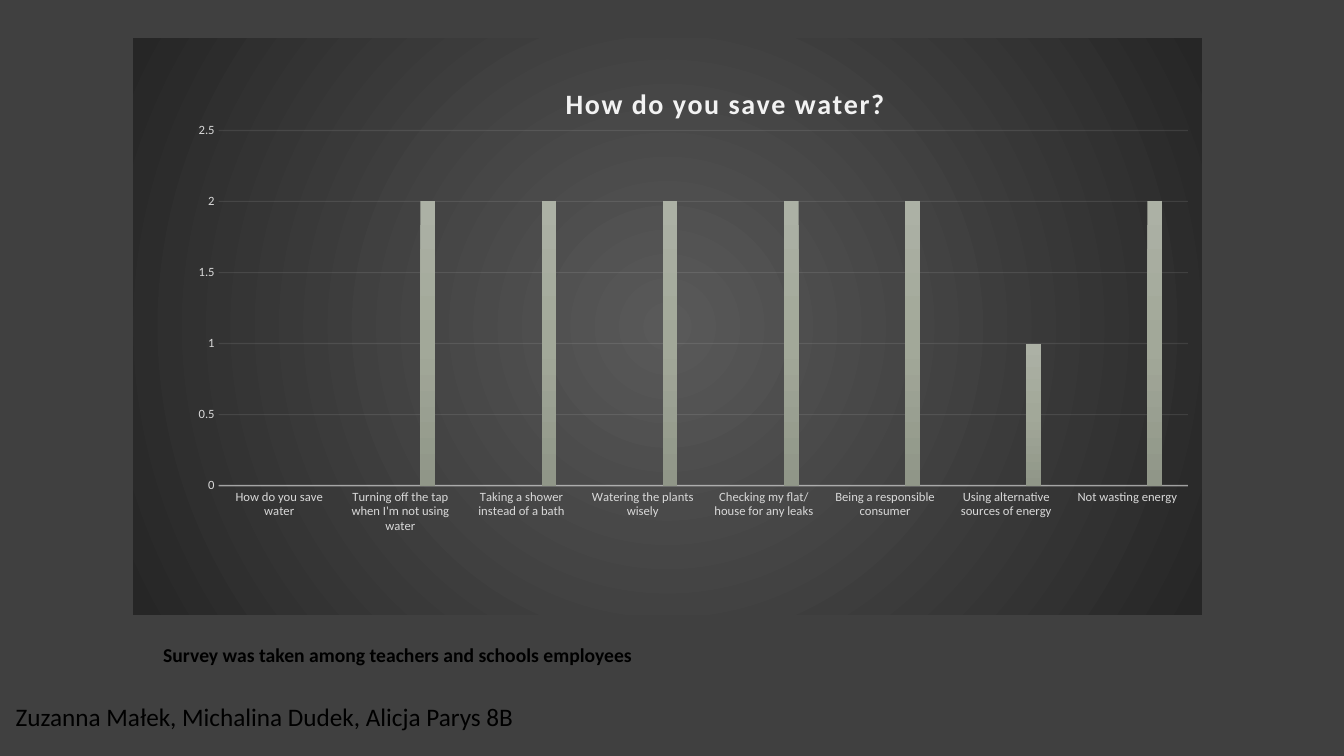
"""Build the slide with the water saving survey chart."""
from pptx import Presentation
from pptx.chart.data import CategoryChartData
from pptx.dml.color import RGBColor
from pptx.enum.chart import XL_CHART_TYPE, XL_TICK_MARK
from pptx.enum.text import MSO_AUTO_SIZE
from pptx.oxml import parse_xml
from pptx.oxml.ns import nsdecls
from pptx.util import Inches, Pt

FONT = "Calibri"
COLORS = {
    "page": "404040",
    "text": "000000",
    "pale": "F2F2F2",
    "label": "D9D9D9",
}
BACKDROP = ["595959", "262626"]
TITLE = "How do you save water?"
ANSWERS = {
    "How do you save water": 0,
    "Turning off the tap when I'm not using water": 2,
    "Taking a shower instead of a bath": 2,
    "Watering the plants wisely": 2,
    "Checking my flat/house for any leaks": 2,
    "Being a responsible consumer": 2,
    "Using alternative sources of energy": 1,
    "Not wasting energy": 2,
}
BLANK = [None] * len(ANSWERS)
SERIES = [
    ("Series 1", BLANK, ["849C9C", "739191", "648383"]),
    ("Series 2", BLANK, ["AFAFAF", "A5A5A5", "939393"]),
    ("Series 3", [0] + BLANK[1:], ["9DADA6", "90A49B", "7F938A"]),
    ("Series 4", BLANK, ["B3B0A4", "AAA797", "989585"]),
    ("Series 5", list(ANSWERS.values()), ["ACB1A5", "A2A899", "909688"]),
    ("Series 6", BLANK, ["978E78", "8B8063", "7D7257"]),
]
CHART_BOX = (1.32, 0.38, 10.6, 5.72)
CAPTIONS = [
    (" Zuzanna Małek, Michalina Dudek, Alicja Parys 8B",
     (0, 6.91, 9.12, 0.4), {"size": Pt(18), "bold": False}),
    ("Survey was taken among teachers and schools employees",
     (1.52, 6.33, 8.31, 0.34), {"size": Pt(14), "bold": True}),
]


def rgb(name):
    return RGBColor.from_string(COLORS[name])


def style(font, color, **values):
    font.name = FONT
    font.color.rgb = rgb(color)
    for key, value in values.items():
        setattr(font, key, value)


def gradient(colors, direction):
    step = 100000 // (len(colors) - 1)
    stops = "".join(
        f'<a:gs pos="{index * step}"><a:srgbClr val="{color}"/></a:gs>'
        for index, color in enumerate(colors))
    return parse_xml(f'<a:gradFill {nsdecls("a")} rotWithShape="1">'
                     f'<a:gsLst>{stops}</a:gsLst>{direction}</a:gradFill>')


def place(anchor, **values):
    """Put a manual layout in front of the anchor element."""
    for old in anchor.getparent().xpath("c:layout"):
        old.getparent().remove(old)
    parts = "".join(f'<c:{key} val="{value}"/>' for key, value in values.items())
    anchor.addprevious(parse_xml(
        f'<c:layout {nsdecls("c")}><c:manualLayout>{parts}</c:manualLayout></c:layout>'))


def format_line(line, width, element, alpha):
    line.width = Pt(width)
    line.color.rgb = rgb("pale")
    for color in element():
        color.append(parse_xml(f'<a:alpha {nsdecls("a")} val="{alpha * 1000}"/>'))


def add_survey_chart(page):
    data = CategoryChartData()
    data.categories = list(ANSWERS)
    for name, values, _ in SERIES:
        data.add_series(name, values)
    chart = page.shapes.add_chart(
        XL_CHART_TYPE.COLUMN_CLUSTERED, *map(Inches, CHART_BOX), data).chart
    root = chart.element
    chart.has_legend = False
    style(chart.font, "text", size=Pt(10))

    chart.has_title = True
    title = chart.chart_title.text_frame
    title.text = TITLE
    span = title.paragraphs[0].runs[0]
    style(span.font, "pale", size=Pt(20), bold=True)
    for properties in root.xpath("c:chart/c:title//a:r/a:rPr"):
        properties.set("spc", "100")

    plot = chart.plots[0]
    for key, value in {"gap_width": 100, "overlap": -24, "vary_by_categories": False}.items():
        setattr(plot, key, value)
    for series, (_, _, colors) in zip(plot.series, SERIES):
        series.format.fill.solid()
        series.format.fill.fore_color.rgb = rgb("pale")
    for solid, (_, _, colors) in zip(root.xpath(".//c:ser/c:spPr/a:solidFill"), SERIES):
        solid.getparent().replace(solid, gradient(colors, '<a:lin ang="5400000" scaled="0"/>'))

    across, up = chart.category_axis, chart.value_axis
    for axis in (across, up):
        axis.major_tick_mark = axis.minor_tick_mark = XL_TICK_MARK.NONE
        style(axis.tick_labels.font, "label", size=Pt(9))
    for key, value in {"minimum_scale": 0, "maximum_scale": 2.5, "major_unit": 0.5,
                       "has_major_gridlines": True}.items():
        setattr(up, key, value)
    up.format.line.fill.background()
    format_line(across.format.line, 1,
                lambda: root.xpath(".//c:catAx/c:spPr//a:srgbClr"), 54)
    format_line(up.major_gridlines.format.line, 0.75,
                lambda: root.xpath(".//c:majorGridlines//a:srgbClr"), 10)

    place(root.xpath("c:chart/c:title/c:overlay")[0],
          xMode="edge", yMode="edge", x=0.4, y=0.07)
    place(root.xpath(".//c:plotArea/c:barChart")[0], layoutTarget="inner",
          xMode="edge", yMode="edge", x=0.08, y=0.16, w=0.907, h=0.616)

    frame = parse_xml(f'<c:spPr {nsdecls("c", "a")}><a:ln><a:noFill/></a:ln></c:spPr>')
    frame.insert(0, gradient(
        BACKDROP, '<a:path path="circle">'
        '<a:fillToRect l="50000" t="50000" r="50000" b="50000"/></a:path>'))
    root.xpath("c:chart")[0].addnext(frame)


def add_caption(page, text, bounds, values):
    box = page.shapes.add_textbox(*map(Inches, bounds))
    frame = box.text_frame
    frame.word_wrap = True
    frame.auto_size = MSO_AUTO_SIZE.SHAPE_TO_FIT_TEXT
    span = frame.paragraphs[0].add_run()
    span.text = text
    style(span.font, "text", **values)


def main():
    deck = Presentation()
    deck.slide_width, deck.slide_height = Inches(13.33), Inches(7.5)
    page = deck.slides.add_slide(deck.slide_layouts[6])
    page.background.fill.solid()
    page.background.fill.fore_color.rgb = rgb("page")
    add_survey_chart(page)
    for caption in CAPTIONS:
        add_caption(page, *caption)
    deck.save("out.pptx")


if __name__ == "__main__":
    main()
